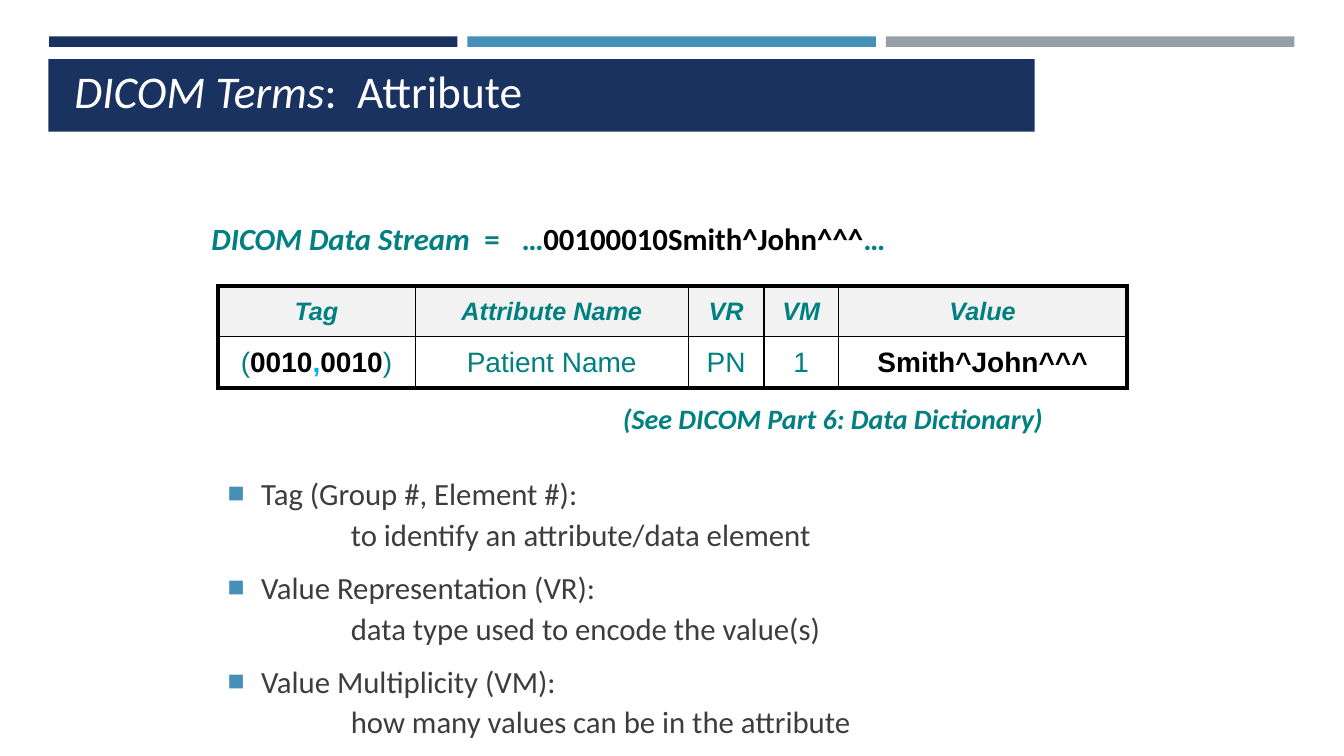
from dataclasses import dataclass

from lxml import etree
from pptx import Presentation
from pptx.dml.color import RGBColor
from pptx.enum.shapes import MSO_SHAPE
from pptx.enum.text import MSO_ANCHOR, PP_ALIGN
from pptx.oxml.ns import qn
from pptx.util import Pt

RECTANGLE = MSO_SHAPE.RECTANGLE
TOP, MIDDLE, BOTTOM = MSO_ANCHOR.TOP, MSO_ANCHOR.MIDDLE, MSO_ANCHOR.BOTTOM
CENTER = PP_ALIGN.CENTER


@dataclass(frozen=True)
class Theme:
    navy: str = "1A3260"
    blue: str = "4590B8"
    gray: str = "969FA7"
    teal: str = "008080"
    comma: str = "00B0F0"
    body: str = "3D3D3D"
    black: str = "000000"
    white: str = "FFFFFF"
    header_fill: str = "F2F2F2"
    text_font: str = "Calibri"
    table_font: str = "Arial"
    title_size: float = 32.4
    text_size: float = 22
    note_size: float = 20
    header_size: float = 18
    value_size: float = 20
    outer_line: float = 3
    inner_line: float = 1


THEME = Theme()

COLUMN_WIDTHS = [141.1, 195.1, 54, 53.3, 205.9]
ROW_HEIGHTS = [36, 36.7]
HEADINGS = ["Tag", "Attribute Name", "VR", "VM", "Value"]
VALUES = [
    [("(", THEME.teal, False), ("0010", THEME.black, True), (",", THEME.comma, True),
     ("0010", THEME.black, True), (")", THEME.teal, False)],
    [("Patient Name", THEME.teal, False)],
    [("PN", THEME.teal, False)],
    [("1", THEME.teal, False)],
    [("Smith^John^^^", THEME.black, True)],
]
TERMS = [
    ("Tag (Group #, Element #):", "to identify an attribute/data element"),
    ("Value Representation (VR):", "data type used to encode the value(s)"),
    ("Value Multiplicity (VM):", "how many values can be in the attribute"),
]


def add_run(paragraph, text, size, color, font=THEME.text_font, bold=False, italic=False):
    run = paragraph.add_run()
    run.text = text
    run.font.name = font
    run.font.size = Pt(size)
    run.font.bold = bold
    run.font.italic = italic
    run.font.color.rgb = RGBColor.from_string(color)


def add_bar(slide, left, top, width, height, color):
    bar = slide.shapes.add_shape(RECTANGLE, Pt(left), Pt(top), Pt(width), Pt(height))
    bar.shadow.inherit = False
    bar.fill.solid()
    bar.fill.fore_color.rgb = RGBColor.from_string(color)
    bar.line.fill.background()


def add_text_frame(slide, left, top, width, height, anchor=TOP):
    box = slide.shapes.add_textbox(Pt(left), Pt(top), Pt(width), Pt(height))
    frame = box.text_frame
    frame.word_wrap = True
    frame.vertical_anchor = anchor
    return frame


def set_tab_stops(paragraph, *stops):
    tab_list = etree.SubElement(paragraph._p.get_or_add_pPr(), qn("a:tabLst"))
    for stop in stops:
        etree.SubElement(tab_list, qn("a:tab"), pos=str(Pt(stop)), algn="l")


def set_square_bullet(paragraph):
    properties = paragraph._p.get_or_add_pPr()
    color = etree.SubElement(properties, qn("a:buClr"))
    etree.SubElement(color, qn("a:srgbClr"), val=THEME.blue)
    etree.SubElement(properties, qn("a:buSzPct"), val="92000")
    etree.SubElement(properties, qn("a:buFont"), typeface=THEME.table_font)
    etree.SubElement(properties, qn("a:buChar"), char="■")


def set_indent(paragraph, left, first_line):
    properties = paragraph._p.get_or_add_pPr()
    properties.set("marL", str(Pt(left)))
    properties.set("indent", str(Pt(first_line)))


def set_borders(cell, is_outer):
    """Draw the four sides; is_outer tells which lie on the table's rim."""
    properties = cell._tc.get_or_add_tcPr()
    for side in ("L", "R", "T", "B"):
        width = THEME.outer_line if is_outer[side] else THEME.inner_line
        line = etree.SubElement(properties, qn(f"a:ln{side}"), w=str(Pt(width)))
        fill = etree.SubElement(line, qn("a:solidFill"))
        etree.SubElement(fill, qn("a:srgbClr"), val=THEME.black)


def add_top_stripes(slide, left, top, width, height, gap=7.2):
    colors = (THEME.navy, THEME.blue, THEME.gray)
    stripe = (width - gap * (len(colors) - 1)) / len(colors)
    for index, color in enumerate(colors):
        add_bar(slide, left + index * (stripe + gap), top, stripe, height, color)


def add_title(slide, left, top, width, height):
    add_bar(slide, left, top, width, height, THEME.navy)
    frame = add_text_frame(slide, left + 11.5, top, width - 17, height - 6.5, BOTTOM)
    title = frame.paragraphs[0]
    set_tab_stops(title, 202)
    add_run(title, "DICOM Terms", THEME.title_size, THEME.white, italic=True)
    add_run(title, ":\tAttribute", THEME.title_size, THEME.white)


def add_data_stream(slide, left, top, width, height):
    stream = add_text_frame(slide, left, top, width, height).paragraphs[0]
    stream.line_spacing = 0.9
    set_tab_stops(stream, 195, 221.5)
    for text, color, italic in (
        ("DICOM Data Stream", THEME.teal, True),
        ("\t=\t…", THEME.teal, False),
        ("00100010Smith^John^^^", THEME.black, False),
        ("…", THEME.teal, False),
    ):
        add_run(stream, text, THEME.text_size, color, bold=True, italic=italic)


def add_attribute_table(slide, left, top):
    table = slide.shapes.add_table(
        len(ROW_HEIGHTS), len(COLUMN_WIDTHS), Pt(left), Pt(top),
        Pt(sum(COLUMN_WIDTHS)), Pt(sum(ROW_HEIGHTS))).table
    for column, width in zip(table.columns, COLUMN_WIDTHS):
        column.width = Pt(width)
    for row, height in zip(table.rows, ROW_HEIGHTS):
        row.height = Pt(height)
    last_row, last_column = len(ROW_HEIGHTS) - 1, len(COLUMN_WIDTHS) - 1
    for r in range(len(ROW_HEIGHTS)):
        for c in range(len(COLUMN_WIDTHS)):
            cell = table.cell(r, c)
            set_borders(cell, {"L": c == 0, "R": c == last_column,
                               "T": r == 0, "B": r == last_row})
            cell.fill.solid()
            cell.fill.fore_color.rgb = RGBColor.from_string(
                THEME.white if r else THEME.header_fill)
            cell.vertical_anchor = MIDDLE
            content = cell.text_frame.paragraphs[0]
            content.alignment = CENTER
            if r == 0:
                add_run(content, HEADINGS[c], THEME.header_size, THEME.teal,
                        THEME.table_font, bold=True, italic=True)
            else:
                for text, color, bold in VALUES[c]:
                    add_run(content, text, THEME.value_size, color,
                            THEME.table_font, bold=bold)


def add_dictionary_note(slide, left, top, width, height):
    note = add_text_frame(slide, left, top, width, height).paragraphs[0]
    note.line_spacing = 0.9
    add_run(note, "(See DICOM Part 6: Data Dictionary)", THEME.note_size,
            THEME.teal, bold=True, italic=True)


def add_terms(slide, left, top, width, height):
    frame = add_text_frame(slide, left, top, width, height, MIDDLE)
    for index, (term, meaning) in enumerate(TERMS):
        heading = frame.add_paragraph() if index else frame.paragraphs[0]
        heading.space_before = Pt(3 if index else 0)
        set_indent(heading, 24, -24)
        set_square_bullet(heading)
        explanation = frame.add_paragraph()
        explanation.space_after = Pt(6)
        set_indent(explanation, 88, 0)
        for paragraph, text in ((heading, term), (explanation, meaning)):
            paragraph.line_spacing = 1.1
            add_run(paragraph, text, THEME.text_size, THEME.body)


def main():
    presentation = Presentation()
    presentation.slide_width, presentation.slide_height = Pt(960), Pt(540)
    slide = presentation.slides.add_slide(presentation.slide_layouts[6])
    add_top_stripes(slide, 35, 26, 889.5, 7.5)
    add_title(slide, 34.6, 42.3, 704.4, 51.8)
    add_attribute_table(slide, 155.5, 204.5)
    add_terms(slide, 155.5, 324, 686, 217)
    add_data_stream(slide, 144, 156.2, 629.3, 38.9)
    add_dictionary_note(slide, 437.8, 285.8, 390.2, 38.9)
    presentation.save("out.pptx")


if __name__ == "__main__":
    main()
